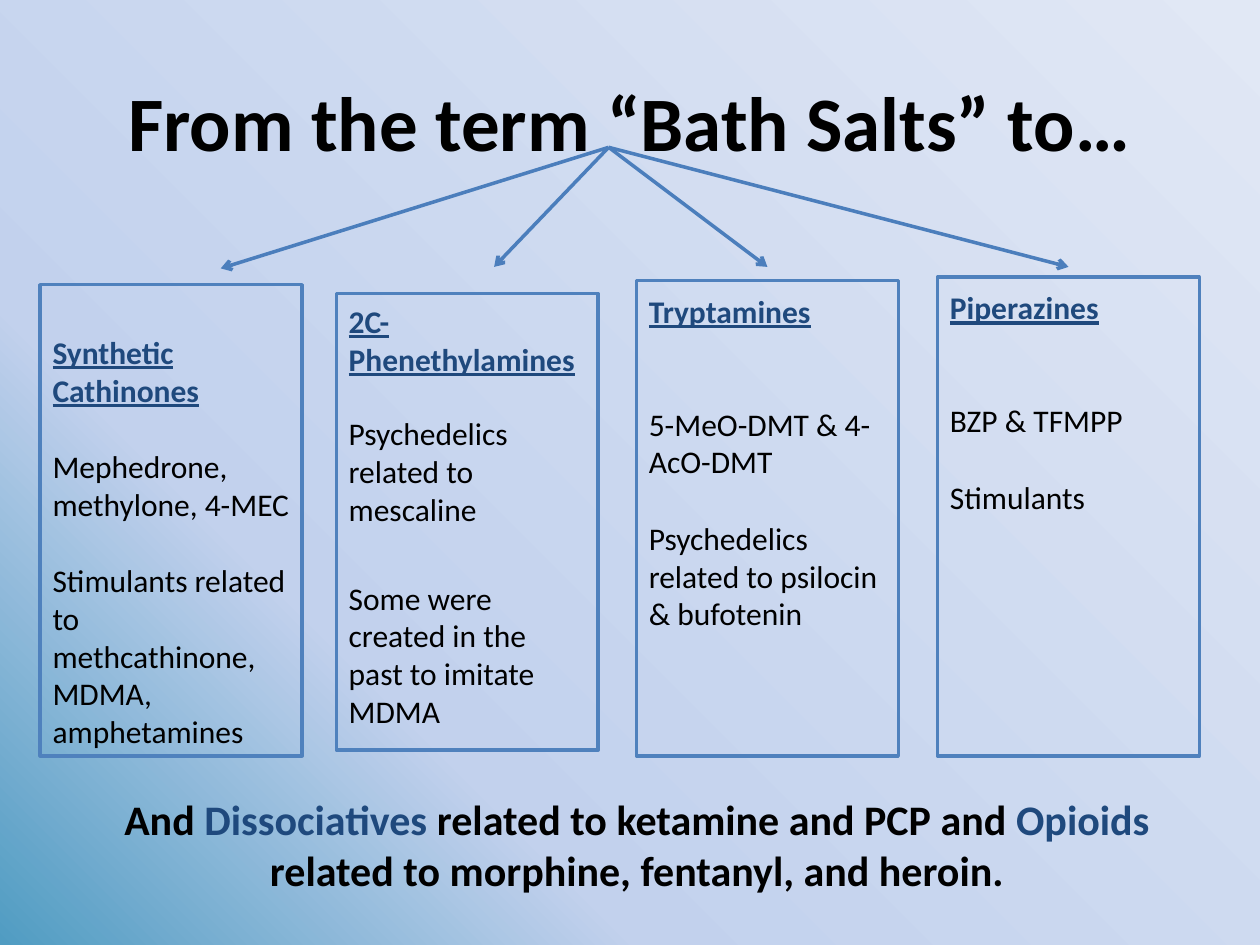
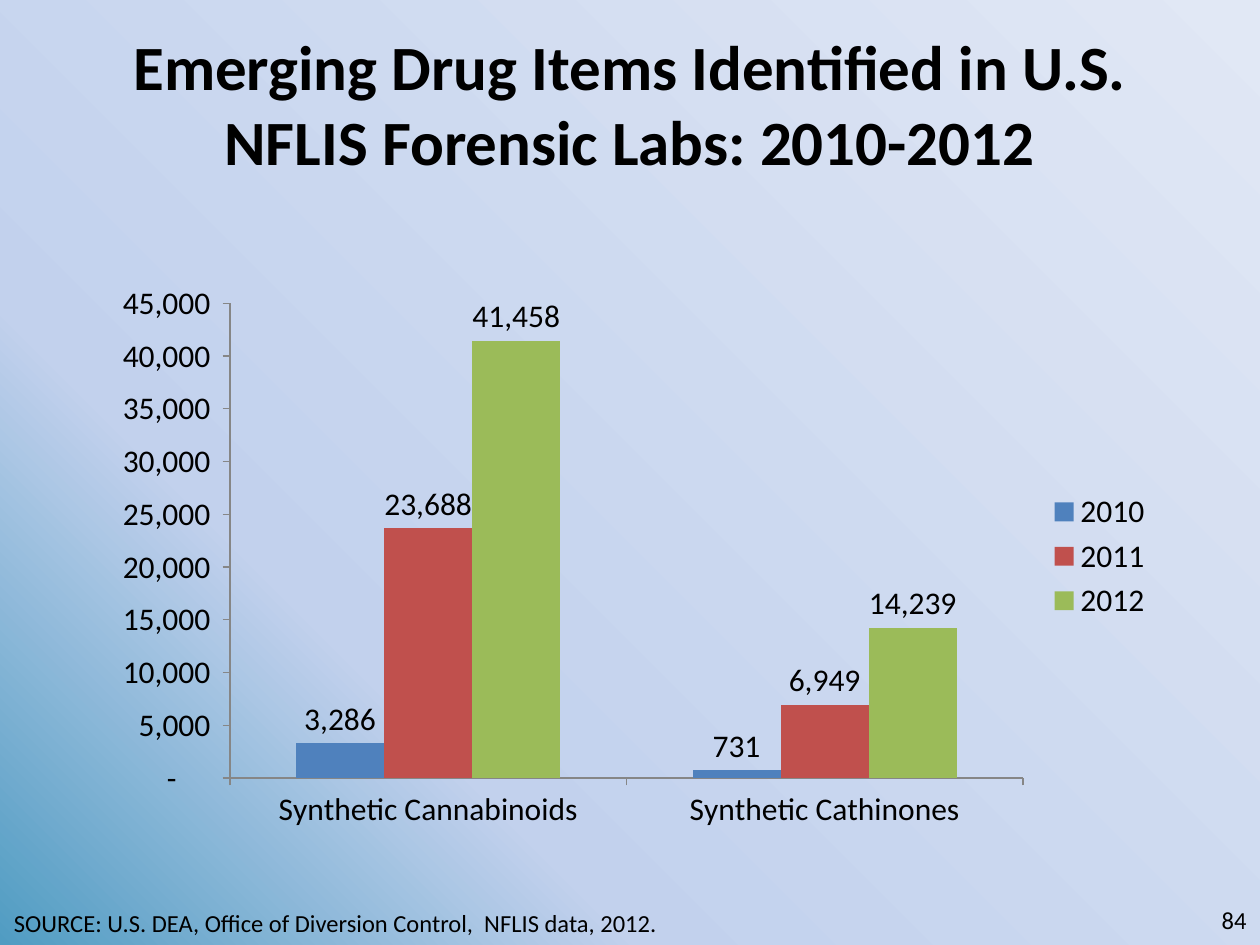
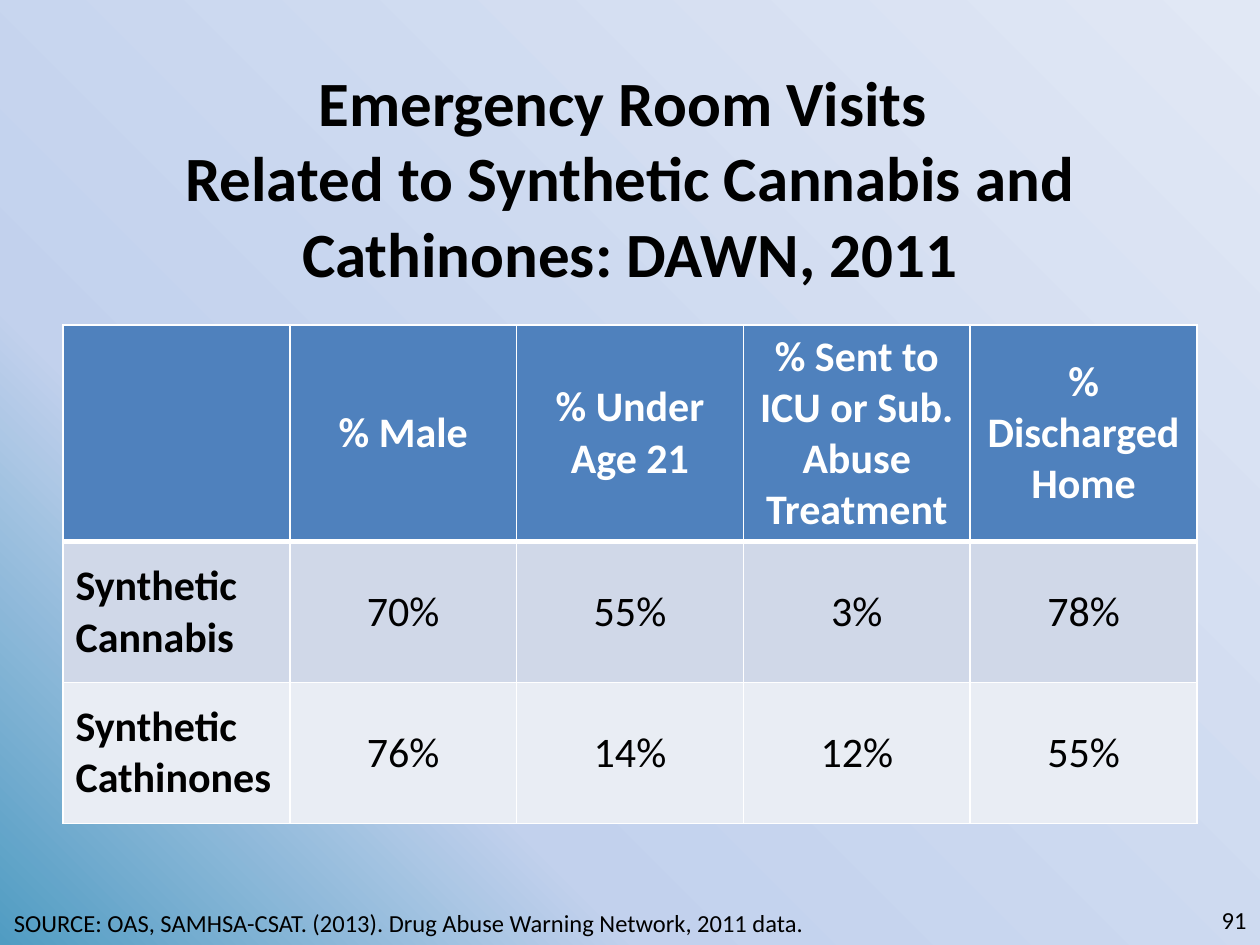
from pptx import Presentation
from pptx.chart.data import CategoryChartData
from pptx.dml.color import RGBColor
from pptx.enum.chart import XL_CHART_TYPE, XL_LABEL_POSITION, XL_LEGEND_POSITION, XL_TICK_MARK
from pptx.enum.shapes import MSO_CONNECTOR, MSO_SHAPE
from pptx.enum.text import MSO_ANCHOR, PP_ALIGN
from pptx.oxml import parse_xml
from pptx.oxml.ns import nsdecls, qn
from pptx.util import Cm, Pt

LEFT, CENTER, RIGHT = PP_ALIGN.LEFT, PP_ALIGN.CENTER, PP_ALIGN.RIGHT
TOP, MIDDLE = MSO_ANCHOR.TOP, MSO_ANCHOR.MIDDLE
RECTANGLE, STRAIGHT = MSO_SHAPE.RECTANGLE, MSO_CONNECTOR.STRAIGHT
COLUMNS = XL_CHART_TYPE.COLUMN_CLUSTERED
OUTSIDE_END = XL_LABEL_POSITION.OUTSIDE_END
LEGEND_RIGHT = XL_LEGEND_POSITION.RIGHT
TICK_OUT = XL_TICK_MARK.OUTSIDE

FONT = "Calibri"
COUNT_FORMAT = '_(* #,##0_);_(* \\(#,##0\\);_(* "-"??_);_('
COLORS = {
    "text": "000000", "white": "FFFFFF", "navy": "1F497D",
    "blue": "4F81BD", "red": "C0504D", "green": "9BBB59",
    "arrow": "4B7EBC", "axis": "868686",
    "band_dark": "D0D8E8", "band_light": "E9EDF4",
    "corner": "509CC2", "mist": "C2D1ED", "pale": "E1E8F5",
}
RGB = {name: RGBColor.from_string(value) for name, value in COLORS.items()}


def write(frame, text, size=18, color="text", bold=False, underline=False,
          align=LEFT, gap=0):
    """Add one paragraph; text is a string or a list of (string, color) runs."""
    paragraph = frame.add_paragraph() if frame.text else frame.paragraphs[0]
    paragraph.alignment = align
    paragraph.space_before = Pt(gap)
    for words, run_color in [(text, color)] if isinstance(text, str) else text:
        for number, line in enumerate(words.split("\n")):
            if number:
                paragraph.add_line_break()
            run = paragraph.add_run()
            run.text = line
            run.font.name = FONT
            run.font.size = Pt(size)
            run.font.bold = bold
            run.font.underline = underline
            run.font.color.rgb = RGB[run_color]


def add_text(slide, text, left, top, width, height, anchor=TOP, **text_format):
    frame = slide.shapes.add_textbox(Cm(left), Cm(top), Cm(width), Cm(height)).text_frame
    frame.word_wrap = True
    frame.vertical_anchor = anchor
    write(frame, text, **text_format)


prs = Presentation()
prs.slide_width, prs.slide_height = Cm(25.4), Cm(19.05)

# Shared background: a glow from the lower left corner
master = prs.slide_master
master.background.fill.solid()
plain_fill = master.element.cSld.find(".//" + qn("a:solidFill"))
stops = "".join(
    f'<a:gs pos="{percent * 1000}"><a:srgbClr val="{COLORS[name]}"/></a:gs>'
    for percent, name in [(0, "corner"), (29, "mist"), (100, "pale")])
plain_fill.getparent().replace(plain_fill, parse_xml(
    f'<a:gradFill rotWithShape="1" {nsdecls("a")}><a:gsLst>{stops}</a:gsLst>'
    '<a:path path="circle"><a:fillToRect t="100000" r="100000"/></a:path></a:gradFill>'))

# Shared titles, sources and page numbers
pages = [
    ("From the term “Bath Salts” to…", 44, 0.84, 3.18, None, None),
    ("Emerging Drug Items Identified in U.S. NFLIS Forensic Labs: 2010-2012",
     36, 0.35, 3.45, "SOURCE: U.S. DEA, Office of Diversion Control,  NFLIS data, 2012.", "84"),
    ("Emergency Room Visits \nRelated to Synthetic Cannabis and Cathinones: DAWN, 2011",
     36, 1.12, 4.88,
     "SOURCE: OAS, SAMHSA-CSAT. (2013). Drug Abuse Warning Network, 2011 data.", "91"),
]
slides = []
for title, size, top, height, source, page_number in pages:
    slide = prs.slides.add_slide(prs.slide_layouts[6])
    slides.append(slide)
    add_text(slide, title, 1.27, top, 22.86, height, anchor=MIDDLE,
             size=size, bold=True, align=CENTER)
    if source:
        add_text(slide, source, 0.03, 18.17, 19, 0.85, size=14)
        add_text(slide, page_number, 19.46, 18.03, 5.92, 1.02, anchor=MIDDLE,
                 size=14, align=RIGHT)
families_slide, labs_slide, visits_slide = slides

# Slide 1: drug families; each fact comes with the space before it in points
families = [
    (0.81, 5.74, 15.24, 0.97, "Synthetic Cathinones",
     [("Mephedrone, methylone, 4-MEC", 22),
      ("Stimulants related to methcathinone, MDMA, amphetamines", 22)]),
    (6.78, 5.92, 15.12, 0.17, "2C- Phenethylamines",
     [("Psychedelics related to mescaline", 21),
      ("Some were created in the past to imitate MDMA", 29)]),
    (12.83, 5.66, 15.24, 0.22, "Tryptamines",
     [("5-MeO-DMT & 4-AcO-DMT", 43),
      ("Psychedelics related to psilocin & bufotenin", 22)]),
    (18.9, 5.59, 15.24, 0.22, "Piperazines",
     [("BZP & TFMPP", 43), ("Stimulants", 22)]),
]
for left, top, bottom, inset, family, facts in families:
    box = families_slide.shapes.add_shape(
        RECTANGLE, Cm(left), Cm(top), Cm(5.28), Cm(bottom - top))
    box.shadow.inherit = False
    box.fill.background()
    box.line.color.rgb = RGB["blue"]
    box.line.width = Pt(2)
    frame = box.text_frame
    frame.word_wrap = True
    frame.vertical_anchor = TOP
    frame.margin_top = Cm(inset)
    write(frame, family, color="navy", bold=True, underline=True)
    for fact, gap in facts:
        write(frame, fact, gap=gap)

add_text(families_slide,
         [("And ", "text"), ("Dissociatives", "navy"),
          (" related to ketamine and PCP and ", "text"), ("Opioids", "navy"),
          (" related to morphine, fentanyl, and heroin.", "text")],
         1.17, 15.88, 23.34, 2.31, size=24, bold=True, align=CENTER)

for tip_x, tip_y in [(4.45, 5.41), (9.96, 5.38), (15.47, 5.38), (21.54, 5.38)]:
    arrow = families_slide.shapes.add_connector(
        STRAIGHT, Cm(12.27), Cm(2.97), Cm(tip_x), Cm(tip_y))
    arrow.line.color.rgb = RGB["arrow"]
    arrow.line.width = Pt(2)
    properties = arrow.element.spPr
    properties.find(qn("a:ln")).append(
        parse_xml(f'<a:tailEnd type="arrow" {nsdecls("a")}/>'))
    properties.append(parse_xml(f'<a:effectLst {nsdecls("a")}/>'))

# Slide 2: items identified per year
lab_items = CategoryChartData()
lab_items.categories = ["Synthetic Cannabinoids", "Synthetic Cathinones"]
lab_items.add_series("2010", (3286, 731))
lab_items.add_series("2011", (23688, 6949))
lab_items.add_series("2012", (41458, 14239))
chart = labs_slide.shapes.add_chart(
    COLUMNS, Cm(1.9), Cm(5.5), Cm(21.59), Cm(11.43), lab_items).chart
chart.has_title = False
chart.font.name = FONT
chart.font.size = Pt(18)
chart.font.color.rgb = RGB["text"]
chart.has_legend = True
chart.legend.position = LEGEND_RIGHT
chart.legend.include_in_layout = False

for axis in (chart.category_axis, chart.value_axis):
    axis.has_major_gridlines = False
    axis.major_tick_mark = TICK_OUT
    axis.format.line.color.rgb = RGB["axis"]
chart.value_axis.minimum_scale = 0
chart.value_axis.maximum_scale = 45000
chart.value_axis.major_unit = 5000

plot = chart.plots[0]
plot.gap_width = 150
plot.overlap = 0
plot.vary_by_categories = False
for year, color in zip(plot.series, ("blue", "red", "green")):
    year.format.fill.solid()
    year.format.fill.fore_color.rgb = RGB[color]
    year.data_labels.show_value = True
    year.data_labels.position = OUTSIDE_END
for numbers in [chart.value_axis.tick_labels] + [year.data_labels for year in plot.series]:
    numbers.number_format = COUNT_FORMAT
    numbers.number_format_is_linked = False

# Slide 3: emergency room visits
visits = [
    ["", "% Male", "% Under Age 21", "% Sent to ICU or Sub. Abuse|Treatment",
     "% Discharged Home"],
    ["Synthetic Cannabis", "70%", "55%", "3%", "78%"],
    ["Synthetic Cathinones", "76%", "14%", "12%", "55%"],
]
row_styles = [(4.37, "blue"), (2.84, "band_dark"), (2.84, "band_light")]
table = visits_slide.shapes.add_table(
    len(visits), len(visits[0]), Cm(1.27), Cm(6.55), Cm(22.86), Cm(10.05)).table
for row, (values, (height, fill)) in enumerate(zip(visits, row_styles)):
    table.rows[row].height = Cm(height)
    for column, value in enumerate(values):
        cell = table.cell(row, column)
        cell.vertical_anchor = MIDDLE
        borders = {"lnL": 1, "lnR": 1, "lnT": 3 if row == 1 else 1, "lnB": 3 if row == 0 else 1}
        for side, width in borders.items():
            cell._tc.get_or_add_tcPr().append(parse_xml(
                f'<a:{side} w="{Pt(width)}" {nsdecls("a")}><a:solidFill>'
                f'<a:srgbClr val="{COLORS["white"]}"/></a:solidFill></a:{side}>'))
        cell.fill.solid()
        cell.fill.fore_color.rgb = RGB[fill]
        for line in value.split("|"):
            write(cell.text_frame, line, size=24,
                  color="white" if row == 0 else "text",
                  bold=row == 0 or column == 0,
                  align=LEFT if column == 0 else CENTER)

prs.save("out.pptx")
